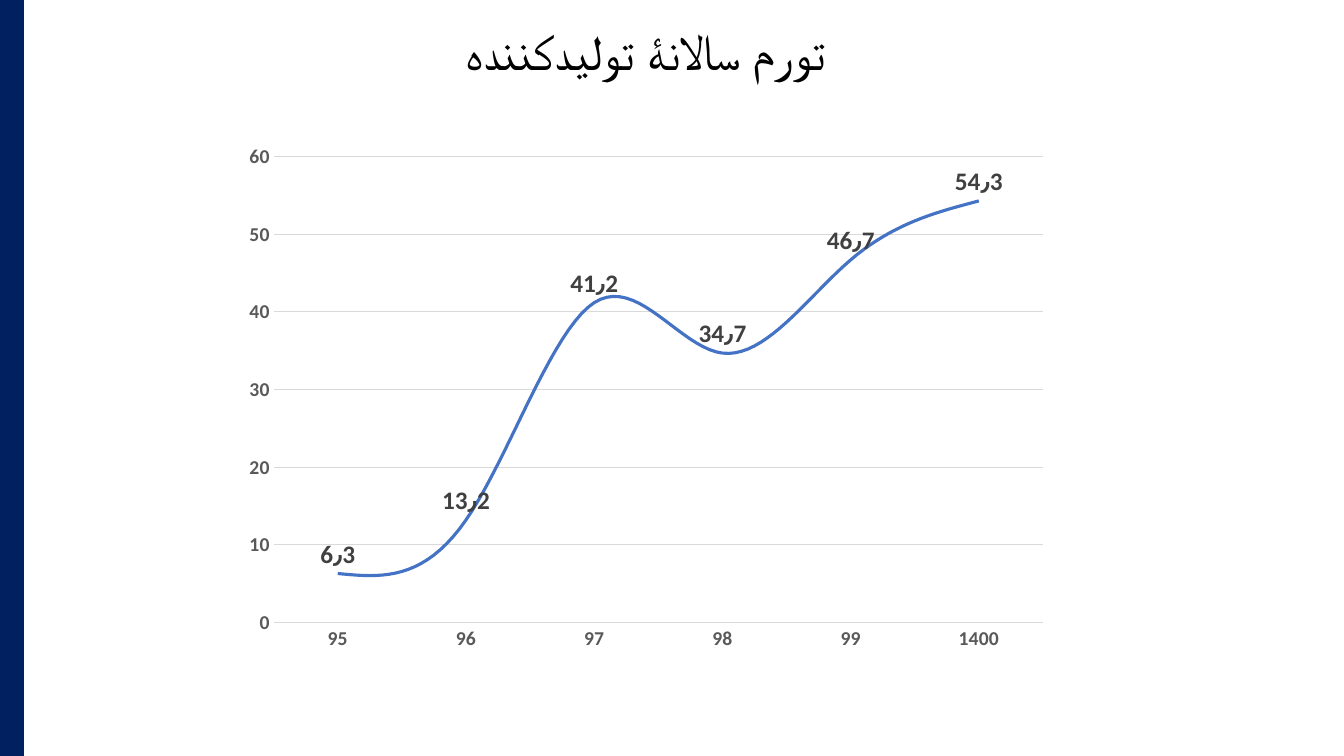
from pptx import Presentation
from pptx.chart.data import CategoryChartData
from pptx.dml.color import RGBColor
from pptx.enum.chart import XL_CHART_TYPE as ChartType
from pptx.enum.chart import XL_LABEL_POSITION as LabelPosition
from pptx.enum.chart import XL_MARKER_STYLE as MarkerStyle
from pptx.enum.chart import XL_TICK_MARK as TickMark
from pptx.enum.shapes import MSO_SHAPE as ShapeType
from pptx.enum.text import MSO_ANCHOR as Anchor
from pptx.enum.text import MSO_AUTO_SIZE as AutoSize
from pptx.enum.text import PP_ALIGN as Align
from pptx.util import Cm, Pt

NAVY = RGBColor(0x00, 0x20, 0x60)
BLUE = RGBColor(0x44, 0x72, 0xC4)
BLACK = RGBColor(0x00, 0x00, 0x00)
LABEL_GRAY = RGBColor(0x40, 0x40, 0x40)
AXIS_GRAY = RGBColor(0x59, 0x59, 0x59)
GRID_GRAY = RGBColor(0xD9, 0xD9, 0xD9)

FONT = "Calibri"
PERSIAN_NUMBER = "[$-3010000]General"
INFLATION = {"95": 6.3, "96": 13.2, "97": 41.2, "98": 34.7, "99": 46.7, "1400": 54.3}


def format_font(font, size, color, bold=False):
    """Set the typeface, size, colour and weight of a font."""
    font.name = FONT
    font.size = Pt(size)
    font.bold = bold
    font.color.rgb = color


def format_line(line, color, width):
    """Set the colour and width of a line."""
    line.color.rgb = color
    line.width = Pt(width)


def format_numbers(labels, size, color):
    """Give axis or data labels the Persian number format and a bold font."""
    labels.number_format = PERSIAN_NUMBER
    labels.number_format_is_linked = False
    format_font(labels.font, size, color, bold=True)


def write_text(frame, text, size, color, align=Align.CENTER, bold=False):
    """Write one right-to-left paragraph into a text frame."""
    paragraph = frame.paragraphs[0]
    paragraph.alignment = align
    paragraph.line_spacing = 1.0
    paragraph._p.get_or_add_pPr().set("rtl", "1")
    run = paragraph.add_run()
    run.text = text
    format_font(run.font, size, color, bold)


def add_side_band(slide, left, top, width, height):
    """Draw the navy band along the edge of the slide."""
    band = slide.shapes.add_shape(ShapeType.RECTANGLE, left, top, width, height)
    band.shadow.inherit = False
    band.fill.solid()
    band.fill.fore_color.rgb = NAVY
    format_line(band.line, NAVY, 1)


def place_title(slide, text, left, top, width, height):
    """Move the title placeholder into its box and fill it."""
    title = slide.shapes.title
    title.left, title.top, title.width, title.height = left, top, width, height
    frame = title.text_frame
    frame.word_wrap = True
    frame.auto_size = AutoSize.SHAPE_TO_FIT_TEXT
    frame.vertical_anchor = Anchor.TOP
    write_text(frame, text, size=36, color=BLACK)


def style_axes(chart):
    """Format both axes and the horizontal gridlines."""
    for axis in (chart.category_axis, chart.value_axis):
        axis.major_tick_mark = axis.minor_tick_mark = TickMark.NONE
        format_numbers(axis.tick_labels, 14, AXIS_GRAY)
    chart.category_axis.has_major_gridlines = False
    format_line(chart.category_axis.format.line, GRID_GRAY, 0.75)
    chart.value_axis.format.line.fill.background()
    chart.value_axis.has_major_gridlines = True
    format_line(chart.value_axis.major_gridlines.format.line, GRID_GRAY, 0.75)


def add_inflation_chart(slide, left, top, width, height):
    """Add the smooth line chart of yearly inflation."""
    data = CategoryChartData(number_format=PERSIAN_NUMBER)
    data.categories = list(INFLATION)
    data.add_series("Series 1", list(INFLATION.values()))
    frame = slide.shapes.add_chart(ChartType.LINE, left, top, width, height, data)
    chart = frame.chart
    chart.has_legend = False
    chart.has_title = False
    format_font(chart.font, 10, BLACK)
    style_axes(chart)

    plot = chart.plots[0]
    plot.vary_by_categories = False
    series = plot.series[0]
    series.smooth = True
    series.marker.style = MarkerStyle.NONE
    format_line(series.format.line, BLUE, 2.25)
    labels = series.data_labels
    labels.show_value = True
    labels.position = LabelPosition.ABOVE
    format_numbers(labels, 18, LABEL_GRAY)


def main():
    """Build the slide and save the presentation."""
    presentation = Presentation()
    presentation.slide_width, presentation.slide_height = Cm(33.87), Cm(19.05)
    slide = presentation.slides.add_slide(presentation.slide_layouts[5])
    left, width = Cm(5.87), Cm(20.83)
    add_side_band(slide, 0, 0, Cm(0.6), presentation.slide_height)
    place_title(slide, "تورم سالانۀ تولیدکننده", left, Cm(0.38), width, Cm(1.8))
    add_inflation_chart(slide, left, Cm(3.38), width, Cm(13.28))
    presentation.save("out.pptx")


if __name__ == "__main__":
    main()
